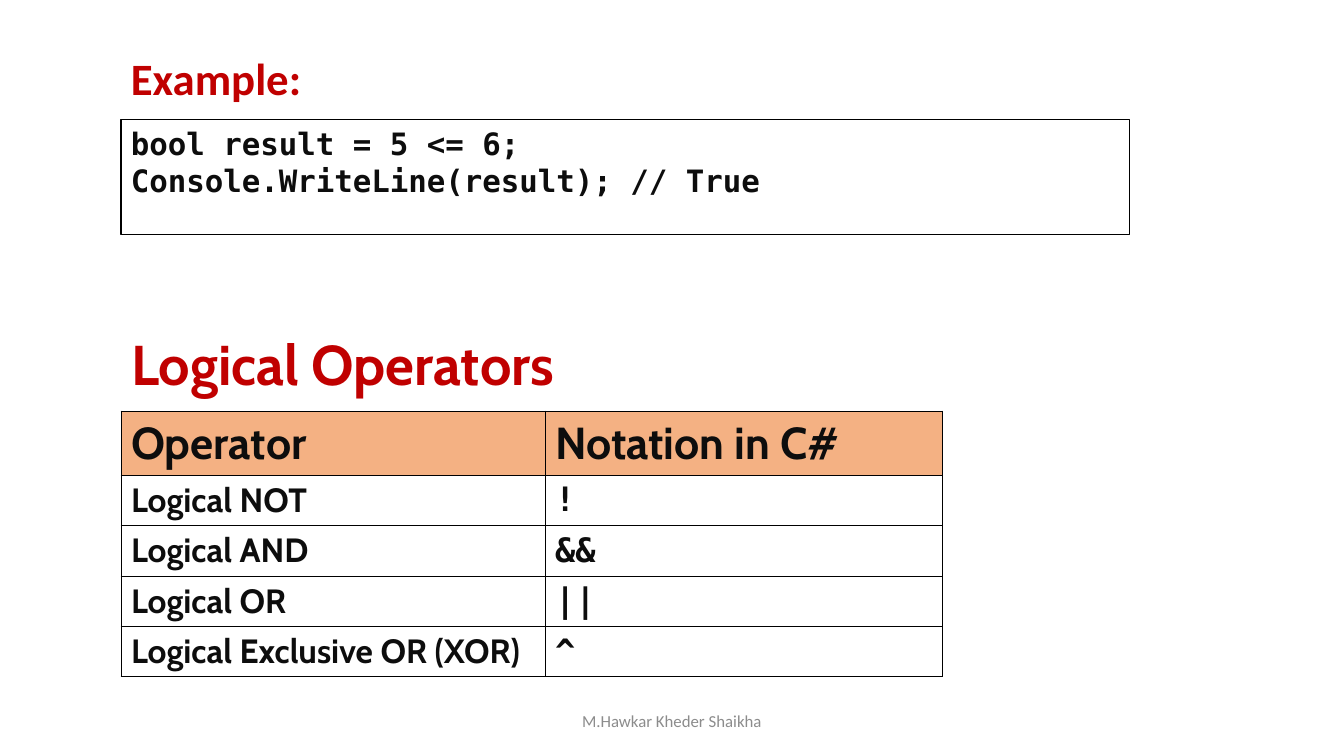
"""Build the slide on C# logical operators."""
from pptx import Presentation
from pptx.dml.color import RGBColor
from pptx.enum.shapes import MSO_SHAPE
from pptx.enum.text import MSO_ANCHOR, MSO_AUTO_SIZE, PP_ALIGN
from pptx.oxml import parse_xml
from pptx.oxml.ns import nsdecls
from pptx.util import Pt

HUES = {"ink": "0D0D0D", "red": "C00000", "gray": "8C8C8C",
        "head": "F4B183", "line": "000000"}
SANS, HEAD, MONO = "Calibri", "Cabin", "DejaVu Sans Mono"

LABEL = "Example:"
CODE = ["bool result = 5 <= 6;", "Console.WriteLine(result); // True"]
TITLE = "Logical Operators"
ROWS = [
    ("Operator", "Notation in C#"),
    ("Logical NOT", "!"),
    ("Logical AND", "&&"),
    ("Logical OR", "||"),
    ("Logical Exclusive OR (XOR)", "^"),
]
FOOTER = "M.Hawkar Kheder Shaikha"

STYLES = {
    "label": {"name": SANS, "size": Pt(32), "bold": True, "hue": "red"},
    "code": {"name": MONO, "size": Pt(22), "bold": True, "hue": "ink"},
    "title": {"name": HEAD, "size": Pt(40), "bold": True, "hue": "red"},
    "head": {"name": HEAD, "size": Pt(32), "bold": True, "hue": "ink"},
    "term": {"name": HEAD, "size": Pt(24), "bold": True, "hue": "ink"},
    "sign": {"name": MONO, "size": Pt(24), "bold": True, "hue": "ink"},
    "footer": {"name": SANS, "size": Pt(12), "bold": False, "hue": "gray"},
}
LEFT = 121
COLS = (424, 397)
HEAD_ROW, BODY_ROW = 64, 50


def px(n):
    return round(n * 914400 / 100.8)


def box(*sides):
    return [px(n) for n in sides]


def color(hue):
    return RGBColor.from_string(HUES[hue])


def write(frame, lines, style, anchor=MSO_ANCHOR.TOP, align=PP_ALIGN.LEFT):
    frame.word_wrap = True
    frame.vertical_anchor = anchor
    for i, line in enumerate(lines):
        para = frame.add_paragraph() if i else frame.paragraphs[0]
        para.alignment = align
        run = para.add_run()
        run.text = line
        for key, value in STYLES[style].items():
            if key == "hue":
                run.font.color.rgb = color(value)
            else:
                setattr(run.font, key, value)


def border(cell):
    props = cell._tc.get_or_add_tcPr()
    for i, side in enumerate(("lnL", "lnR", "lnT", "lnB")):
        props.insert(i, parse_xml(
            f'<a:{side} {nsdecls("a")} w="{Pt(0.5)}"><a:solidFill>'
            f'<a:srgbClr val="{HUES["line"]}"/></a:solidFill></a:{side}>'))


def add_grid(slide):
    high = HEAD_ROW + BODY_ROW * (len(ROWS) - 1)
    grid = slide.shapes.add_table(
        len(ROWS), len(COLS), *box(LEFT, 411, sum(COLS), high)).table
    for col, wide in zip(grid.columns, COLS):
        col.width = px(wide)
    for r, row in enumerate(ROWS):
        grid.rows[r].height = px(BODY_ROW if r else HEAD_ROW)
        for c, text in enumerate(row):
            cell = grid.cell(r, c)
            if r:
                cell.fill.background()
            else:
                cell.fill.solid()
                cell.fill.fore_color.rgb = color("head")
            border(cell)
            style = ("term", "sign")[c] if r else "head"
            write(cell.text_frame, [text], style)
            cell.vertical_anchor = MSO_ANCHOR.MIDDLE


def main():
    deck = Presentation()
    deck.slide_width, deck.slide_height = box(1344, 756)
    slide = deck.slides.add_slide(deck.slide_layouts[5])
    shapes = slide.shapes

    code = shapes.add_shape(MSO_SHAPE.RECTANGLE, *box(LEFT, 120, 1009, 115))
    code.shadow.inherit = False
    code.fill.background()
    code.line.color.rgb = color("line")
    code.line.width = Pt(0.75)
    write(code.text_frame, CODE, "code")

    label = shapes.add_textbox(*box(LEFT, 46, 672, 119))
    write(label.text_frame, [LABEL], "label")

    title = shapes.title
    title.left, title.top, title.width, title.height = box(LEFT, 324, 672, 87)
    title.text_frame.auto_size = MSO_AUTO_SIZE.NONE
    write(title.text_frame, [TITLE], "title")

    add_grid(slide)

    footer = shapes.add_textbox(*box(445, 701, 454, 40))
    write(footer.text_frame, [FOOTER], "footer",
          MSO_ANCHOR.MIDDLE, PP_ALIGN.CENTER)
    deck.save("out.pptx")


if __name__ == "__main__":
    main()
